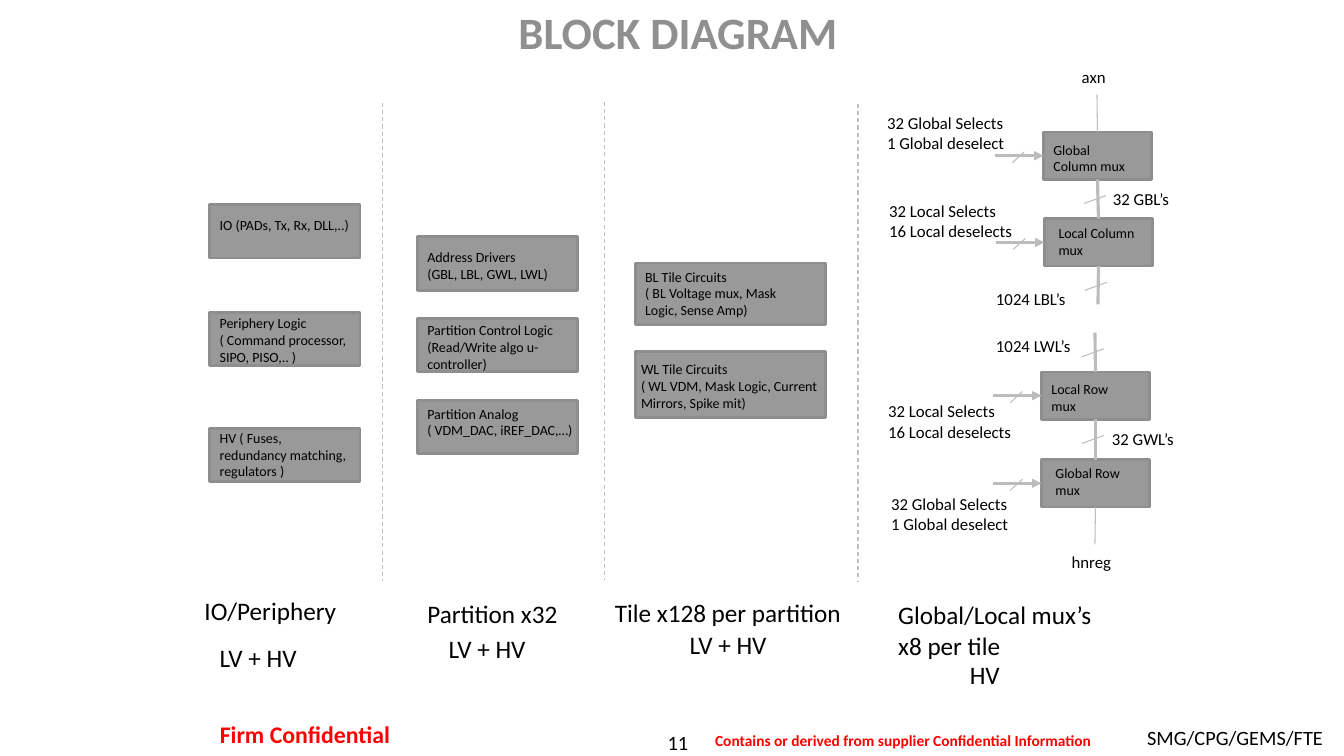
from lxml import etree
from pptx import Presentation, util as u
from pptx.dml.color import RGBColor
from pptx.enum import dml, shapes, text
from pptx.oxml.ns import qn

deck = Presentation()
deck.slide_width, deck.slide_height = u.Inches(13.33), u.Inches(7.5)
slide = deck.slides.add_slide(deck.slide_layouts[6])

BLACK, RED, WIRE = "000000", "FF0000", "BCBCBC"
LEFT, CENTER, RIGHT = text.PP_ALIGN.LEFT, text.PP_ALIGN.CENTER, text.PP_ALIGN.RIGHT


def write(words, left, top, width, height, size, color=BLACK, bold=False, align=LEFT, inset=(0.1, 0.05)):
    box = slide.shapes.add_textbox(*map(u.Inches, (left, top, width, height)))
    frame = box.text_frame
    frame.text = words
    side, edge = map(u.Inches, inset)
    layout = {"word_wrap": True, "margin_left": side, "margin_right": side,
              "margin_top": edge, "margin_bottom": edge}
    for key, value in layout.items():
        setattr(frame, key, value)
    for paragraph in frame.paragraphs:
        paragraph.alignment = align
        for key, value in {"name": "Calibri", "size": u.Pt(size), "bold": bold}.items():
            setattr(paragraph.font, key, value)
        paragraph.font.color.rgb = RGBColor.from_string(color)


def draw_line(x1, y1, x2, y2, weight=0.75, color=WIRE):
    line = slide.shapes.add_connector(shapes.MSO_CONNECTOR.STRAIGHT, *map(u.Inches, (x1, y1, x2, y2)))
    line.line.color.rgb = RGBColor.from_string(color)
    line.line.width = u.Pt(weight)
    etree.SubElement(line._element.spPr, qn("a:effectLst"))
    return line


write("11", 5.56, 7.24, 2.33, 0.24, 14.5, align=CENTER, inset=(0, 0))
write("SMG/CPG/GEMS/FTE", 8.83, 7.15, 4.39, 0.35, 14.5, align=RIGHT)
for notice, left, top, width, height, size in [
    ("Firm Confidential", 1.55, 7.08, 2.95, 0.41, 17),
    ("Contains or derived from supplier Confidential Information", 6.92, 7.19, 4.08, 0.31, 11),
]:
    write(notice, left, top, width, height, size, RED, True, CENTER, (0.12, 0.06))
write("BLOCK DIAGRAM", 1.94, 0, 9.57, 0.61, 32, "909090", True, CENTER)

MUX_WIDTH, MUX_HEIGHT = 1.07, 0.47
blocks = [
    (2.08, 2.03, 1.49, 0.53, "IO (PADs, Tx, Rx, DLL,..)", 2.08, 2.1, 1.49, 0.44),
    (2.08, 3.1, 1.49, 0.53, "Periphery Logic\n( Command processor, SIPO, PISO,.. )", 2.08, 3.07, 1.72, 0.61),
    (2.08, 4.25, 1.49, 0.53, "HV ( Fuses, redundancy matching, regulators )", 2.08, 4.21, 1.49, 0.61),
    (4.14, 2.35, 1.59, 0.53, "Address Drivers\n(GBL, LBL, GWL, LWL)", 4.14, 2.42, 1.49, 0.44),
    (4.14, 3.16, 1.59, 0.53, "Partition Control Logic\n(Read/Write algo u-controller)", 4.14, 3.14, 1.59, 0.61),
    (4.14, 3.97, 1.59, 0.53, "Partition Analog\n( VDM_DAC, iREF_DAC,…)", 4.14, 3.97, 1.72, 0.44),
    (6.3, 2.61, 1.89, 0.61, "BL Tile Circuits\n( BL Voltage mux, Mask Logic, Sense Amp)", 6.3, 2.61, 1.59, 0.61),
    (6.3, 3.49, 1.89, 0.65, "WL Tile Circuits\n( WL VDM, Mask Logic, Current Mirrors, Spike mit)", 6.26, 3.53, 2, 0.61),
    (10.35, 1.31, MUX_WIDTH, MUX_HEIGHT, "Global Column mux", 10.35, 1.35, 0.95, 0.44),
    (10.36, 2.17, MUX_WIDTH, MUX_HEIGHT, "Local Column mux", 10.4, 2.18, 0.95, 0.44),
    (10.33, 3.69, MUX_WIDTH, MUX_HEIGHT, "Local Row mux", 10.33, 3.73, 0.95, 0.44),
    (10.33, 4.56, MUX_WIDTH, MUX_HEIGHT, "Global Row mux", 10.37, 4.56, 0.95, 0.44),
]
muxes = []
for left, top, width, height, label, *label_place in blocks:
    block = slide.shapes.add_shape(shapes.MSO_SHAPE.RECTANGLE, *map(u.Inches, (left, top, width, height)))
    block.shadow.inherit = False
    block.fill.solid()
    block.fill.fore_color.rgb = RGBColor.from_string("999999")
    block.line.color.rgb = RGBColor.from_string("8E8E8E")
    block.line.width = u.Pt(2)
    write(label, *label_place, 10)
    if label.endswith(" mux"):
        muxes.append(block)
        middle = top + height / 2
        select = draw_line(left - 0.48, middle, left, middle, 2.25)
        select.end_connect(block, 1)
        etree.SubElement(select.line._get_or_add_ln(), qn("a:tailEnd"), type="triangle")
        draw_line(left - 0.31, middle + 0.07, left - 0.19, middle - 0.04)

global_column, local_column, local_row, global_row = muxes
for x, top, bottom, weight, upper, lower in [
    (10.88, 0.94, 1.31, 0.75, None, global_column),
    (10.88, 1.78, 2.17, 2.25, global_column, local_column),
    (10.89, 2.64, 3.02, 2.25, local_column, None),
    (10.86, 3.3, 3.69, 2.25, None, local_row),
    (10.86, 4.16, 4.56, 2.25, local_row, global_row),
    (10.86, 5.03, 5.4, 0.75, global_row, None),
]:
    bus = draw_line(x, top, x, bottom, weight)
    if upper:
        bus.begin_connect(upper, 2)
    if lower:
        bus.end_connect(lower, 0)
    if weight > 1:
        draw_line(x - 0.13, top + 0.24, x + 0.09, top + 0.16)

for signal, left, top, width, height in [
    ("axn", 10.63, 0.61, 0.46, 0.3),
    ("32 Global Selects\n1 Global deselect", 8.7, 1.07, 1.4, 0.5),
    ("32 GBL’s", 10.94, 1.82, 0.8, 0.3),
    ("32 Local Selects\n16 Local deselects", 8.72, 1.94, 1.53, 0.5),
    ("1024 LBL’s", 9.78, 2.82, 1.01, 0.3),
    ("1024 LWL’s", 9.78, 3.28, 1.01, 0.3),
    ("32 Local Selects\n16 Local deselects", 8.71, 3.93, 1.53, 0.5),
    ("32 GWL’s", 10.93, 4.2, 0.88, 0.3),
    ("32 Global Selects\n1 Global deselect", 8.74, 4.85, 1.4, 0.5),
    ("hnreg", 10.53, 5.42, 0.68, 0.3),
]:
    write(signal, left, top, width, height, 12)

for x, top in [(3.79, 1.02), (6, 1.01), (8.51, 1.03)]:
    divider = draw_line(x, top, x, top + 4.74, color="C0C0C0")
    divider.line.dash_style = dml.MSO_LINE.DASH

for stage, left, top, width, height, supply, supply_left, supply_top in [
    ("IO/Periphery", 1.93, 5.86, 2, 0.4, "LV + HV", 2.08, 6.32),
    ("Partition x32", 4.14, 5.89, 2, 0.4, "LV + HV", 4.35, 6.23),
    ("Tile x128 per partition", 6, 5.88, 2.57, 0.4, "LV + HV", 6.74, 6.19),
    ("Global/Local mux’s x8 per tile", 8.81, 5.9, 2.16, 0.71, "HV", 9.52, 6.49),
]:
    write(stage, left, top, width, height, 18)
    write(supply, supply_left, supply_top, 1.29, 0.4, 18)

deck.save("out.pptx")
